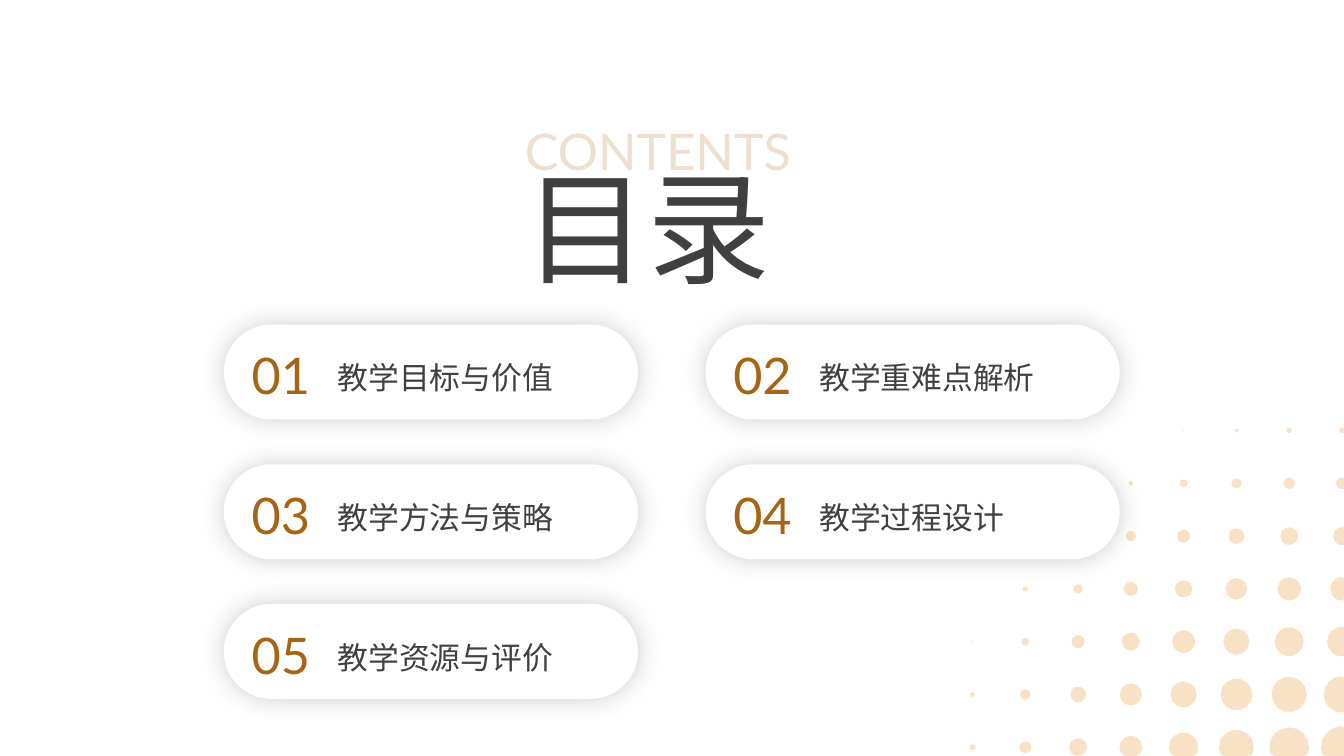
"""Builds the contents slide of a teaching plan."""
from math import cos, pi, sin

from lxml import etree
from pptx import Presentation
from pptx.dml.color import RGBColor
from pptx.enum.shapes import MSO_SHAPE
from pptx.enum.text import MSO_ANCHOR, PP_ALIGN
from pptx.oxml.ns import qn
from pptx.util import Cm, Pt

ROUNDED = MSO_SHAPE.ROUNDED_RECTANGLE
TOP, MIDDLE = MSO_ANCHOR.TOP, MSO_ANCHOR.MIDDLE
LEFT, JUSTIFY = PP_ALIGN.LEFT, PP_ALIGN.JUSTIFY

TOPICS = ["教学目标与价值", "教学重难点解析", "教学方法与策略", "教学过程设计", "教学资源与评价"]
BROWN, GREY, SAND, WHITE = "A66414", "404040", "F8E1C5", "FFFFFF"
FONT = "Lato"

SLIDE_WIDTH, SLIDE_HEIGHT = Cm(33.87), Cm(19.05)
CARD_LEFT, CARD_TOP = 5.64, 8.18
CARD_WIDTH, CARD_HEIGHT = 10.44, 2.39
CARD_STEP_X, CARD_STEP_Y = 12.14, 3.52

DOT_LEFT, DOT_TOP, DOT_STEP = 23.18, 9.52, 1.33
DOT_COLUMNS = 9
DOT_RADII_MM = [
    [0.05, 0.05],
    [0.1, 0.2, 0.5, 0.65, 0.7],
    [0.2, 0.6, 1, 1.3, 1.45, 1.5],
    [0.1, 0.8, 1.3, 1.65, 2, 2.25, 2.3],
    [0.1, 0.65, 1.2, 1.8, 2.2, 2.7, 2.95, 3],
    [0.2, 1, 1.65, 2.3, 2.9, 3.3, 3.65, 3.75],
    [0.05, 0.6, 1.3, 2, 2.8, 3.3, 4, 4.45, 4.6],
    [0.1, 0.75, 1.5, 2.25, 2.9, 3.7, 4.4, 5, 5.3],
]


def color(value):
    return RGBColor.from_string(value)


def paint(shape, fill):
    shape.fill.solid()
    shape.fill.fore_color.rgb = color(fill)
    shape.line.fill.background()
    shape.shadow.inherit = False


def add_soft_shadow(shape):
    effects = shape._element.spPr.find(qn("a:effectLst"))
    shadow = etree.SubElement(effects, qn("a:outerShdw"), blurRad=str(Pt(18)),
                              dist="0", dir="0", algn="ctr", rotWithShape="0")
    black = etree.SubElement(shadow, qn("a:srgbClr"), val="000000")
    etree.SubElement(black, qn("a:alpha"), val="20000")


def add_text(page, words, place, size, fill, spacing, align=LEFT, anchor=MIDDLE):
    box = page.shapes.add_textbox(*[Cm(length) for length in place])
    frame = box.text_frame
    frame.word_wrap = True
    frame.vertical_anchor = anchor
    frame.margin_left = frame.margin_right = 0
    frame.margin_top = frame.margin_bottom = 0
    para = frame.paragraphs[0]
    para.alignment = align
    para.line_spacing = spacing
    span = para.add_run()
    span.text = words
    span.font.name = FONT
    span.font.size = Pt(size)
    span.font.color.rgb = color(fill)
    return span


def dot_outline(row, column, radius_mm):
    center_x = DOT_LEFT + column * DOT_STEP
    center_y = DOT_TOP + row * DOT_STEP
    radius = radius_mm / 10
    corners = 6 + 2 * round(radius_mm)
    angles = [2 * pi * corner / corners for corner in range(corners)]
    return [(min(Cm(center_x + radius * cos(angle)), SLIDE_WIDTH),
             min(Cm(center_y + radius * sin(angle)), SLIDE_HEIGHT))
            for angle in angles]


def add_dots(page):
    outlines = [dot_outline(row, DOT_COLUMNS - len(radii) + place, radius)
                for row, radii in enumerate(DOT_RADII_MM)
                for place, radius in enumerate(radii)]
    builder = page.shapes.build_freeform(*outlines[0][0])
    for outline in outlines:
        builder.move_to(*outline[0])
        builder.add_line_segments(outline[1:], close=True)
    paint(builder.convert_to_shape(), SAND)


def add_card(page, index, topic):
    row, column = divmod(index, 2)
    left = CARD_LEFT + column * CARD_STEP_X
    top = CARD_TOP + row * CARD_STEP_Y
    card = page.shapes.add_shape(ROUNDED, Cm(left), Cm(top),
                                 Cm(CARD_WIDTH), Cm(CARD_HEIGHT))
    card.adjustments[0] = 0.5
    paint(card, WHITE)
    add_soft_shadow(card)
    add_text(page, topic, (left + 2.87, top + 0.3, 6.93, 1.78), 22, GREY, 1.3)
    add_text(page, f"{index + 1:02}", (left + 0.7, top + 0.3, 2.1, 1.78), 36, BROWN, 1.1)


def main():
    deck = Presentation()
    deck.slide_width, deck.slide_height = SLIDE_WIDTH, SLIDE_HEIGHT
    page = deck.slides.add_slide(deck.slide_layouts[6])
    add_dots(page)
    heading = add_text(page, "CONTENTS", (13.23, 2.87, 7.77, 1.55), 36, BROWN, 1.1, JUSTIFY, TOP)
    tint = heading._r.xpath(".//a:srgbClr")[0]
    etree.SubElement(tint, qn("a:alpha"), val="20000")
    add_text(page, "目录", (13.21, 3.43, 7.42, 3.76), 88, GREY, 1.1, JUSTIFY, TOP)
    for index, topic in enumerate(TOPICS):
        add_card(page, index, topic)
    deck.save("out.pptx")


if __name__ == "__main__":
    main()
